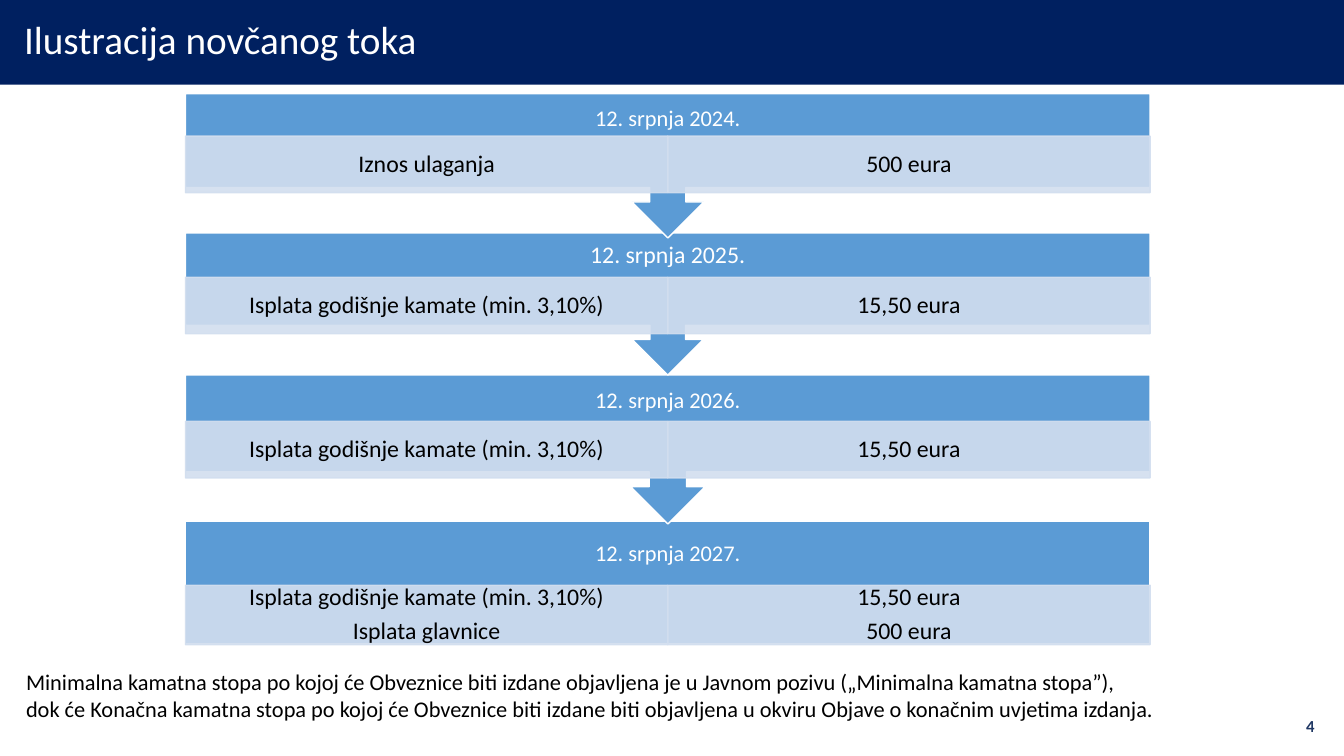
import dataclasses

import pptx
import pptx.dml.color
import pptx.enum.shapes
import pptx.enum.text
import pptx.oxml
import pptx.oxml.ns
import pptx.util

Pt = pptx.util.Pt
Shape = pptx.enum.shapes.MSO_SHAPE
Align = pptx.enum.text.PP_ALIGN
Anchor = pptx.enum.text.MSO_ANCHOR


@dataclasses.dataclass(frozen=True)
class Theme:
    font: str = "Calibri"
    navy: str = "002060"
    ink: str = "203864"
    blue: str = "5B9BD5"
    pale: str = "D2DEEF"
    white: str = "FFFFFF"
    black: str = "000000"
    title: float = 28
    cell: float = 17
    body: float = 16
    small: float = 12


def rgb(code):
    return pptx.dml.color.RGBColor.from_string(code)


def fade(fill, share):
    """Set the opacity of a solid fill, in percent."""
    color = fill.fore_color._xFill[0]
    alpha = pptx.oxml.parse_xml(
        f'<a:alpha {pptx.oxml.ns.nsdecls("a")} val="{share * 1000}"/>')
    color.append(alpha)


def write(shape, lines, *, font, size, color, bold=False, align=Align.LEFT,
          anchor=Anchor.MIDDLE, inset=(7.2, 3.6), wrap=True, lead=None, gap=0):
    """Fill a shape with paragraphs; gap is the space between them."""
    frame = shape.text_frame
    frame.word_wrap = wrap
    frame.vertical_anchor = anchor
    frame.margin_left = frame.margin_right = Pt(inset[0])
    frame.margin_top = frame.margin_bottom = Pt(inset[1])
    frame.text = "\n".join(lines)
    for para in frame.paragraphs:
        para.alignment = align
        para.line_spacing = lead
        para.space_before = Pt(0)
        para.space_after = Pt(gap)
        para.font.name = font
        para.font.size = Pt(size)
        para.font.bold = bold
        para.font.color.rgb = rgb(color)


class Deck:
    def __init__(self, theme):
        self.theme = theme
        self.show = pptx.Presentation()
        self.show.slide_width = Pt(960)
        self.show.slide_height = Pt(540)
        self.slide = self.show.slides.add_slide(self.show.slide_layouts[5])

    def shape(self, kind, box, fill, line=None, share=100):
        item = self.slide.shapes.add_shape(kind, *map(Pt, box))
        item.shadow.inherit = False
        item.fill.solid()
        item.fill.fore_color.rgb = rgb(fill)
        if line:
            item.line.color.rgb = rgb(line)
            item.line.width = Pt(1)
        else:
            item.line.fill.background()
        if share < 100:
            fade(item.fill, share)
            fade(item.line.fill, share)
        return item

    def text(self, box, lines, **style):
        item = self.slide.shapes.add_textbox(*map(Pt, box))
        write(item, lines, font=self.theme.font, **style)

    def title(self, words):
        look = self.theme
        band = self.shape(Shape.RECTANGLE, (0, 0, 960, 60.5), look.navy)
        head = self.slide.shapes.title
        head.left, head.top, head.width, head.height = map(Pt, (10, 4.3, 828, 51))
        write(head, [words], font=look.font, size=look.title,
              color=look.white, lead=0.9)
        band.element.addnext(head.element)

    def step(self, kind, left, top, wide, high, head, date, size, drop, deep, cells):
        """Draw one payment date with its row of cells."""
        look = self.theme
        back = self.shape(kind, (left, top, wide, high), look.blue, look.white)
        if kind == Shape.UP_ARROW_CALLOUT:
            back.rotation = 180
        self.text((left, top, wide, head), [date], size=size, color=look.white,
                  align=Align.CENTER, inset=(8.6, 8.6), lead=0.9)
        half = wide / 2
        for col, lines in enumerate(cells):
            cell = self.shape(Shape.RECTANGLE, (left + col * half, drop, half, deep),
                              look.pale, look.pale, share=90)
            write(cell, lines, font=look.font, size=look.cell, color=look.black,
                  align=Align.CENTER, inset=(9.4, 1.4), lead=0.9, gap=6)


def main():
    look = Theme()
    deck = Deck(look)
    deck.title("Ilustracija novčanog toka")

    rate, coupon = "Isplata godišnje kamate (min. 3,10%)", "15,50 eura"
    arrow = Shape.UP_ARROW_CALLOUT
    # kind, top, height, date height, year, date size, cell top, cell height, cells
    steps = [
        (arrow, 67, 103, 36, 2024, look.body, 97.2, 40.4,
         (["Iznos ulaganja"], ["500 eura"])),
        (arrow, 166.3, 101.6, 33.5, 2025, look.cell, 198, 40.4,
         ([rate], [coupon])),
        (arrow, 267.8, 106.5, 37.4, 2026, look.body, 301, 40.4,
         ([rate], [coupon])),
        (Shape.RECTANGLE, 372.3, 87.8, 47.5, 2027, look.body, 418, 42.5,
         ([rate, "Isplata glavnice"], [coupon, "500 eura"])),
    ]
    for kind, top, high, head, year, size, drop, deep, cells in reversed(steps):
        deck.step(kind, 132.5, top, 689, high, head, f"12. srpnja {year}.",
                  size, drop, deep, cells)

    deck.text((11.5, 473.8, 830, 46), [
        "Minimalna kamatna stopa po kojoj će Obveznice biti izdane objavljena je "
        "u Javnom pozivu („Minimalna kamatna stopa”),",
        "dok će Konačna kamatna stopa po kojoj će Obveznice biti izdane biti "
        "objavljena u okviru Objave o konačnim uvjetima izdanja.",
    ], size=look.body, color=look.black, anchor=Anchor.TOP, wrap=False)
    deck.text((914.4, 504, 31.7, 28.8), ["4"], size=look.small, color=look.ink,
              bold=True, align=Align.RIGHT)
    deck.show.save("out.pptx")


if __name__ == "__main__":
    main()
